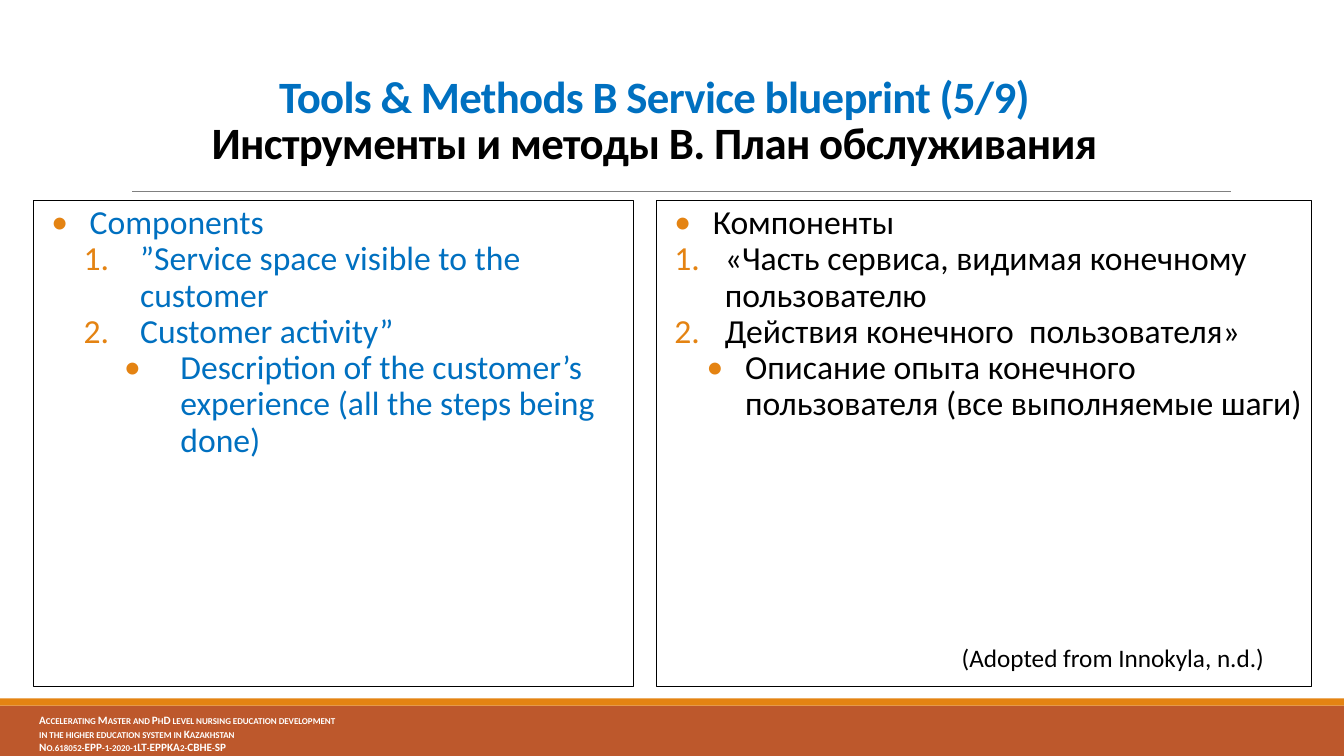
from lxml.etree import SubElement
from pptx import Presentation
from pptx.dml.color import RGBColor
from pptx.enum.shapes import MSO_CONNECTOR, MSO_SHAPE
from pptx.enum.text import MSO_ANCHOR, PP_ALIGN
from pptx.oxml.ns import qn
from pptx.util import Inches, Pt

BLUE = RGBColor(0x00, 0x70, 0xC0)
BLACK = RGBColor(0x00, 0x00, 0x00)
WHITE = RGBColor(0xFF, 0xFF, 0xFF)
GREY = RGBColor(0x80, 0x80, 0x80)
ORANGE = RGBColor(0xE4, 0x83, 0x12)
RUST = RGBColor(0xBD, 0x58, 0x2C)
FONT = "Calibri"

TITLE = [
    ("Tools & Methods B Service blueprint (5/9)", BLUE),
    ("Инструменты и методы B. План обслуживания", BLACK),
]
BANDS = [(7, 0.5, RUST), (6.93, 0.07, ORANGE)]
FOOTER = [
    "Accelerating Master and PhD level nursing education development",
    "in the higher education system in Kazakhstan",
    "No.618052-EPP-1-2020-1LT-EPPKA2-CBHE-SP",
]
CITATION = "(Adopted from Innokyla, n.d.)"
PANELS = [
    (0.33, 5.95, BLUE, [
        ("Components", "•", 0, 0.56, 0.38),
        ("”Service space visible to the customer", "1.", 1, 1.06, 0.56),
        ("Customer activity”", "1.", 1, 1.06, 0.56),
        ("Description of the customer’s experience (all the steps being done)", "•", 3, 1.46, 0.56),
    ]),
    (6.51, 6.5, BLACK, [
        ("Компоненты", "•", 0, 0.56, 0.38),
        ("«Часть сервиса, видимая конечному пользователю", "1.", 0, 0.68, 0.5),
        ("Действия конечного  пользователя»", "1.", 0, 0.68, 0.5),
        ("Описание опыта конечного пользователя (все выполняемые шаги)", "•", 1, 0.88, 0.38),
    ]),
]


def style_span(span, size, color, bold=False):
    """Set the font of one run."""
    span.font.name = FONT
    span.font.size = Pt(size)
    span.font.bold = bold
    span.font.color.rgb = color


def add_rectangle(slide, left, top, width, height):
    """Add a plain rectangle without a shadow."""
    box = slide.shapes.add_shape(
        MSO_SHAPE.RECTANGLE, Inches(left), Inches(top), Inches(width), Inches(height))
    box.shadow.inherit = False
    return box


def add_bullet(para, mark, left, hanging):
    """Give a paragraph a hanging orange bullet or number."""
    properties = para._p.get_or_add_pPr()
    properties.set("marL", str(Inches(left)))
    properties.set("indent", str(-Inches(hanging)))
    color = SubElement(properties, qn("a:buClr"))
    SubElement(color, qn("a:srgbClr"), val=str(ORANGE))
    SubElement(properties, qn("a:buFont"), typeface=FONT)
    if mark == "•":
        SubElement(properties, qn("a:buChar"), char=mark)
    else:
        SubElement(properties, qn("a:buAutoNum"), type="arabicPeriod")


def add_backdrop(slide):
    """Draw the footer bands and the rule below the title."""
    for top, height, color in BANDS:
        band = add_rectangle(slide, 0, top, 13.33, height)
        band.fill.solid()
        band.fill.fore_color.rgb = color
        band.line.fill.background()
    rule = slide.shapes.add_connector(
        MSO_CONNECTOR.STRAIGHT, Inches(1.31), Inches(1.9), Inches(12.21), Inches(1.9))
    rule.line.color.rgb = GREY
    rule.line.width = Pt(0.5)
    SubElement(rule._element.spPr, qn("a:effectLst"))


def fill_title(title):
    """Place the two-language title."""
    title.left, title.top = Inches(0.33), Inches(0.54)
    title.width, title.height = Inches(12.32), Inches(1.18)
    title.text_frame.vertical_anchor = MSO_ANCHOR.BOTTOM
    para = title.text_frame.paragraphs[0]
    para.text = "\v".join(text for text, color in TITLE)
    para.alignment = PP_ALIGN.CENTER
    para.line_spacing = 0.85
    for span, (text, color) in zip(para.runs, TITLE):
        style_span(span, 32, color, bold=True)
        span.font._element.set("spc", "-50")
    for line_break in para._p.findall(qn("a:br")):
        SubElement(line_break, qn("a:rPr"), sz="3200")


def add_panel(slide, left, width, color, items):
    """Add one outlined panel with its list."""
    panel = add_rectangle(slide, left, 1.99, width, 4.82)
    panel.fill.background()
    panel.line.color.rgb = BLACK
    panel.line.width = Pt(0.25)
    frame = panel.text_frame
    frame.word_wrap = True
    frame.vertical_anchor = MSO_ANCHOR.TOP
    frame.margin_left = frame.margin_right = 0
    frame.text = "\n".join(item[0] for item in items)
    for para, (text, mark, level, indent, hanging) in zip(frame.paragraphs, items):
        add_bullet(para, mark, indent, hanging)
        para.level = level
        para.alignment = PP_ALIGN.LEFT
        para.line_spacing = 0.9
        style_span(para.runs[0], 24, color)


def add_text(slide, left, top, width, height, lines, size, color, bold=False):
    """Add a text box and return its runs."""
    box = slide.shapes.add_textbox(Inches(left), Inches(top), Inches(width), Inches(height))
    box.text_frame.word_wrap = True
    box.text_frame.text = "\n".join(lines)
    spans = [para.runs[0] for para in box.text_frame.paragraphs]
    for span in spans:
        style_span(span, size, color, bold)
    return spans


def main():
    """Build and save the slide."""
    deck = Presentation()
    deck.slide_width, deck.slide_height = Inches(13.33), Inches(7.5)
    slide = deck.slides.add_slide(deck.slide_layouts[5])
    add_backdrop(slide)
    fill_title(slide.shapes.title)
    for span in add_text(slide, 0.29, 7.03, 4.59, 0.47, FOOTER, 8, WHITE, bold=True):
        span.font._element.set("cap", "small")
    for panel in PANELS:
        add_panel(slide, *panel)
    add_text(slide, 9.44, 6.32, 3.21, 0.41, [CITATION], 18, BLACK)
    deck.save("out.pptx")


if __name__ == "__main__":
    main()
